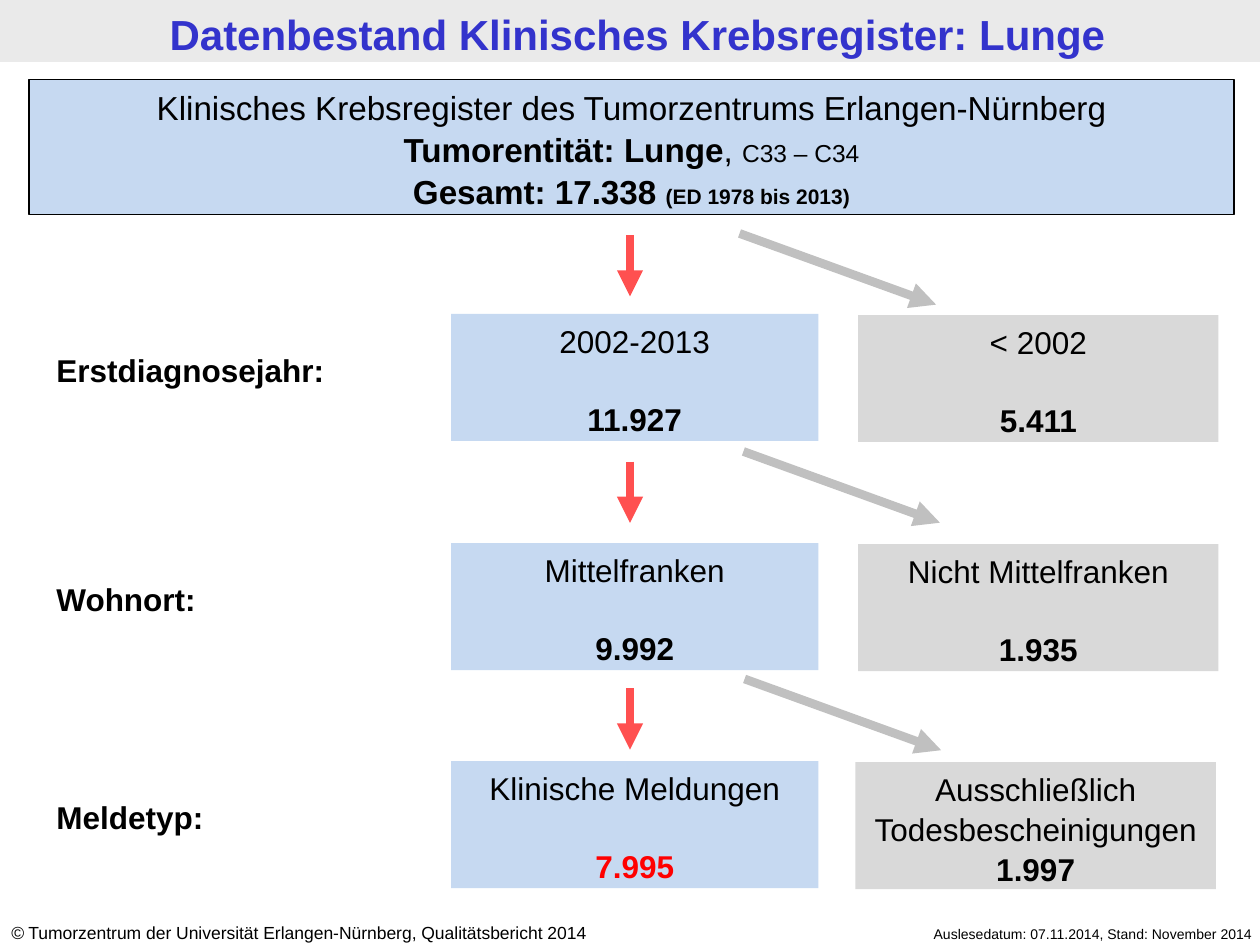
from lxml import etree
from pptx import Presentation
from pptx.dml.color import RGBColor
from pptx.enum.shapes import MSO_CONNECTOR, MSO_SHAPE
from pptx.enum.text import MSO_ANCHOR, PP_ALIGN
from pptx.oxml.ns import qn
from pptx.util import Pt

LEFT, MID, RIGHT = PP_ALIGN.LEFT, PP_ALIGN.CENTER, PP_ALIGN.RIGHT
TOP = MSO_ANCHOR.TOP
RECT = MSO_SHAPE.RECTANGLE
LINE = MSO_CONNECTOR.STRAIGHT

BLACK = RGBColor(0, 0, 0)
NAVY = RGBColor(0x33, 0x33, 0xCC)
RED = RGBColor(0xFF, 0, 0)
CORAL = RGBColor(0xFF, 0x50, 0x50)
BLUE = RGBColor(0xC6, 0xD9, 0xF1)
GREY = RGBColor(0xD9, 0xD9, 0xD9)
PALE = RGBColor(0xEA, 0xEA, 0xEA)
SILVER = RGBColor(0xC0, 0xC0, 0xC0)

# Content: a paragraph is a list of runs, a run is (text, format)
BOLD = {"bold": True}
TITLE = "Datenbestand Klinisches Krebsregister: Lunge"
HEAD = [
    [("Klinisches Krebsregister des Tumorzentrums Erlangen-Nürnberg", {})],
    [("Tumorentität: Lunge", BOLD), (", ", {}), ("C33 – C34", {"size": 14})],
    [("Gesamt: 17.338 ", BOLD),
     ("(ED 1978 bis 2013)", {"size": 12, "bold": True})],
]
SOURCE = [[
    ("©", {"italic": True}),
    (" Tumorzentrum der Universität Erlangen-Nürnberg, "
     "Qualitätsbericht 2014", {}),
]]
DATE = "Auslesedatum: 07.11.2014, Stand: November 2014"

# Label, kept group, dropped group (name, count), colour of kept count
STEPS = [
    ("Erstdiagnosejahr:", ("2002-2013", "11.927"),
     ("< 2002", "5.411"), BLACK),
    ("Wohnort:", ("Mittelfranken", "9.992"),
     ("Nicht Mittelfranken", "1.935"), BLACK),
    ("Meldetyp:", ("Klinische Meldungen", "7.995"),
     ("Ausschließlich Todesbescheinigungen", "1.997"), RED),
]
# Box top, left of dropped box, top of red arrow, start of grey arrow
PLACES = [
    (179.4, 490.3, 134.4, (422.6, 133.4)),
    (310.3, 490.3, 263.8, (424.8, 258)),
    (434.9, 488.8, 393.3, (425.5, 388)),
]
KEEP_X, KEEP_W, DROP_W, BOX_H = 257.8, 209.8, 206, 72.6
LEAD = 1.05
GAP = 21.7  # one line between a short name and its count

deck = Presentation()
deck.slide_width, deck.slide_height = Pt(720), Pt(540)
slide = deck.slides.add_slide(deck.slide_layouts[6])


def write(shape, paras, size=18, color=BLACK, align=MID, gap=0,
          inset=(7.2, 3.6), **base):
    """Fill a shape with text; gap is the space above later paragraphs."""
    if isinstance(paras, str):
        paras = [[(paras, {})]]
    frame = shape.text_frame
    frame.word_wrap = True
    frame.vertical_anchor = TOP
    frame.margin_left = frame.margin_right = Pt(inset[0])
    frame.margin_top = frame.margin_bottom = Pt(inset[1])
    for i, runs in enumerate(paras):
        para = frame.add_paragraph() if i else frame.paragraphs[0]
        para.alignment = align
        para.line_spacing = LEAD
        if i and gap:
            para.space_before = Pt(gap)
        for text, form in runs:
            form = {"size": size, "color": color, **base, **form}
            run = para.add_run()
            run.text = text
            run.font.name = "Arial"
            run.font.size = Pt(form["size"])
            run.font.color.rgb = form["color"]
            run.font.bold = form.get("bold", False)
            run.font.italic = form.get("italic", False)


def box(x, y, w, h, fill, line=None):
    shape = slide.shapes.add_shape(RECT, Pt(x), Pt(y), Pt(w), Pt(h))
    shape.shadow.inherit = False
    shape.fill.solid()
    shape.fill.fore_color.rgb = fill
    if line is None:
        shape.line.fill.background()
    else:
        shape.line.color.rgb = line
        shape.line.width = Pt(0.75)
    return shape


def label(x, y, w, h, paras, **form):
    write(slide.shapes.add_textbox(Pt(x), Pt(y), Pt(w), Pt(h)), paras, **form)


def arrow(x, y, dx, dy, color):
    link = slide.shapes.add_connector(
        LINE, Pt(x), Pt(y), Pt(x + dx), Pt(y + dy))
    link.line.color.rgb = color
    link.line.width = Pt(5)
    props = link._element.spPr
    etree.SubElement(props.find(qn("a:ln")), qn("a:tailEnd"), type="triangle")
    etree.SubElement(props, qn("a:effectLst"))


def group(x, y, w, fill, name, count, color=BLACK):
    wraps = len(name) > 20  # a two-line name needs no gap
    write(box(x, y, w, BOX_H, fill),
          [[(name, {})], [(count, {"bold": True, "color": color})]],
          gap=0 if wraps else GAP)


# Title band and register box
box(0, 0, 720, 35.4, PALE)
label(4.3, 0.7, 720, 35.3, TITLE, size=24, color=NAVY, bold=True,
      inset=(6.5, 2.9))
write(box(16.6, 45.5, 688.6, 77, BLUE, BLACK), HEAD, size=19,
      inset=(7.9, 3.6))

# Selection steps
for (name, keep, drop, color), (y, x, red_y, grey) in zip(STEPS, PLACES):
    label(25.2, y + 16.3, 198.7, 28.8, name, align=LEFT, bold=True)
    group(KEEP_X, y, KEEP_W, BLUE, *keep, color)
    group(x, y + 0.6, DROP_W, GREY, *drop)
    arrow(360, red_y, 0, 35, CORAL)
    arrow(*grey, 112.3, 40.7, SILVER)

# Footer
label(-0.7, 522.7, 377.3, 19.4, SOURCE, size=10, align=LEFT)
label(478.8, 524.9, 244, 17.3, DATE, size=8, align=RIGHT)

deck.save("out.pptx")
